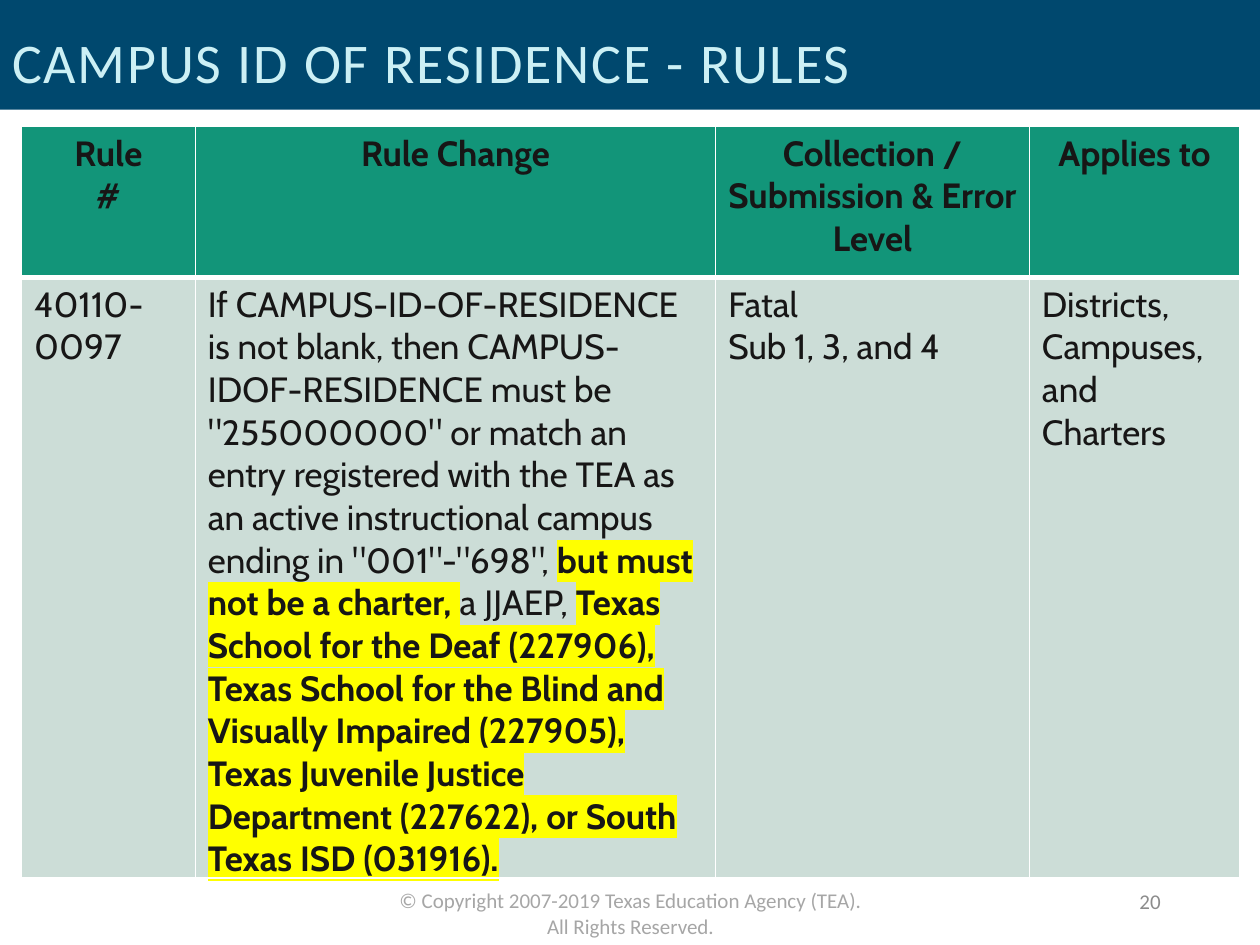
import pptx
import pptx.dml.color
import pptx.enum.shapes
import pptx.enum.text
import pptx.oxml
import pptx.oxml.ns
import pptx.util
from dataclasses import dataclass

ALIGN = pptx.enum.text.PP_ALIGN
ANCHOR = pptx.enum.text.MSO_ANCHOR
WIDTH, HEIGHT = 10, 7.5


@dataclass(frozen=True)
class Theme:
    banner: str = "00486E"
    title: str = "CCF0F5"
    footer: str = "A6A6A6"
    number: str = "8C8C8C"
    header: str = "129579"
    body: str = "CCDDD7"
    ink: str = "171616"
    rule: str = "FFFFFF"
    marker: str = "FFFF00"
    text_font: str = "Calibri"
    table_font: str = "Cabin"
    title_size: int = 32
    table_size: int = 20
    small_size: int = 12


THEME = Theme()
COLUMNS = (1.38, 4.13, 2.49, 1.67)
ROWS = (1.2, 4.43)
HEADERS = (("Rule", "#"), ("Rule Change",),
           ("Collection / Submission & Error Level",), ("Applies to",))
# A paragraph is a string, or a list of (text, is_changed) pieces.
RULE_CHANGE = [
    ('If CAMPUS-ID-OF-RESIDENCE is not blank, then CAMPUS-IDOF-RESIDENCE must be '
     '"255000000" or match an entry registered with the TEA as an active '
     'instructional campus ending in "001"-"698", ', False),
    ("but must not be a charter, ", True),
    ("a JJAEP, ", False),
    ("Texas School for the Deaf (227906), Texas School for the Blind and Visually "
     "Impaired (227905), Texas Juvenile Justice Department (227622), or South "
     "Texas ISD (031916).", True),
]
RULE = (("40110-0097",), (RULE_CHANGE,), ("Fatal", "Sub 1, 3, and 4"),
        ("Districts, Campuses, and Charters",))
RULE_SPACING = (6, 6, 0, 0)


def rgb(color):
    return pptx.dml.color.RGBColor.from_string(color)


def place(x, y, w, h):
    """Turn shares of the slide into a position and size."""
    return [pptx.util.Inches(v) for v in (x * WIDTH, y * HEIGHT, w * WIDTH, h * HEIGHT)]


def element(xml):
    return pptx.oxml.parse_xml(xml.replace(" ", f' {pptx.oxml.ns.nsdecls("a")} ', 1))


def add_run(p, text, size, color, font, bold=False):
    r = p.add_run()
    r.text = text
    for name, value in {"size": pptx.util.Pt(size), "name": font, "bold": bold}.items():
        setattr(r.font, name, value)
    r.font.color.rgb = rgb(color)
    return r


def highlight(r):
    fill = r.font._element.find(pptx.oxml.ns.qn("a:solidFill"))
    fill.addnext(element(f'<a:highlight ><a:srgbClr val="{THEME.marker}"/></a:highlight>'))


def add_banner(s):
    sp = s.shapes.add_shape(pptx.enum.shapes.MSO_SHAPE.RECTANGLE, *place(0, 0, 1, 0.116))
    sp.shadow.inherit = False
    sp.fill.solid()
    sp.fill.fore_color.rgb = rgb(THEME.banner)
    sp.line.fill.background()


def add_text(s, box, text, size, color, align, anchor):
    tf = s.shapes.add_textbox(*place(*box)).text_frame
    for name, value in {"word_wrap": True, "vertical_anchor": anchor}.items():
        setattr(tf, name, value)
    p = tf.paragraphs[0]
    p.alignment = align
    return add_run(p, text, size, color, THEME.text_font)


def add_title(s):
    r = add_text(s, (0, 0.007, 0.9, 0.116), "CAMPUS ID OF RESIDENCE - RULES",
                 THEME.title_size, THEME.title, ALIGN.LEFT, ANCHOR.MIDDLE)
    r.font._element.set("spc", "100")


def set_borders(cell, widths):
    """Draw left, right, top and bottom borders of the given points."""
    tc_pr = cell._tc.get_or_add_tcPr()
    for i, (side, width) in enumerate(zip("LRTB", widths)):
        tc_pr.insert(i, element(
            f'<a:ln{side} w="{pptx.util.Pt(width)}"><a:solidFill>'
            f'<a:srgbClr val="{THEME.rule}"/></a:solidFill></a:ln{side}>'))


def fill_cell(cell, paragraphs, fill, borders, align, bold=False, spacing=0):
    cell.fill.solid()
    cell.fill.fore_color.rgb = rgb(fill)
    set_borders(cell, borders)
    tf = cell.text_frame
    for i, pieces in enumerate(paragraphs):
        p = tf.add_paragraph() if i else tf.paragraphs[0]
        p.alignment = align
        if spacing:
            p.space_after = pptx.util.Pt(spacing)
        if isinstance(pieces, str):
            pieces = [(pieces, False)]
        for text, changed in pieces:
            r = add_run(p, text, THEME.table_size, THEME.ink, THEME.table_font,
                        bold or changed)
            if changed:
                highlight(r)


def add_rules_table(s):
    box = place(0.017, 1 / HEIGHT, sum(COLUMNS) / WIDTH, sum(ROWS) / HEIGHT)
    table = s.shapes.add_table(len(ROWS), len(COLUMNS), *box).table
    for col, width in zip(table.columns, COLUMNS):
        col.width = pptx.util.Inches(width)
    for row, height in zip(table.rows, ROWS):
        row.height = pptx.util.Inches(height)
    for i, (header, rule, spacing) in enumerate(zip(HEADERS, RULE, RULE_SPACING)):
        fill_cell(table.cell(0, i), header, THEME.header, (1, 1, 1, 3),
                  ALIGN.CENTER, bold=True)
        fill_cell(table.cell(1, i), rule, THEME.body, (1, 1, 3, 1),
                  ALIGN.LEFT, spacing=spacing)


def main():
    prs = pptx.Presentation()
    prs.slide_width = pptx.util.Inches(WIDTH)
    prs.slide_height = pptx.util.Inches(HEIGHT)
    s = prs.slides.add_slide(prs.slide_layouts[6])
    add_banner(s)
    add_text(s, (0.304, 0.933, 0.393, 0.04),
             "© Copyright 2007-2019 Texas Education Agency (TEA). All Rights Reserved.",
             THEME.small_size, THEME.footer, ALIGN.CENTER, ANCHOR.TOP)
    add_title(s)
    add_text(s, (0.706, 0.927, 0.225, 0.053), "20",
             THEME.small_size, THEME.number, ALIGN.RIGHT, ANCHOR.MIDDLE)
    add_rules_table(s)
    prs.save("out.pptx")


if __name__ == "__main__":
    main()
